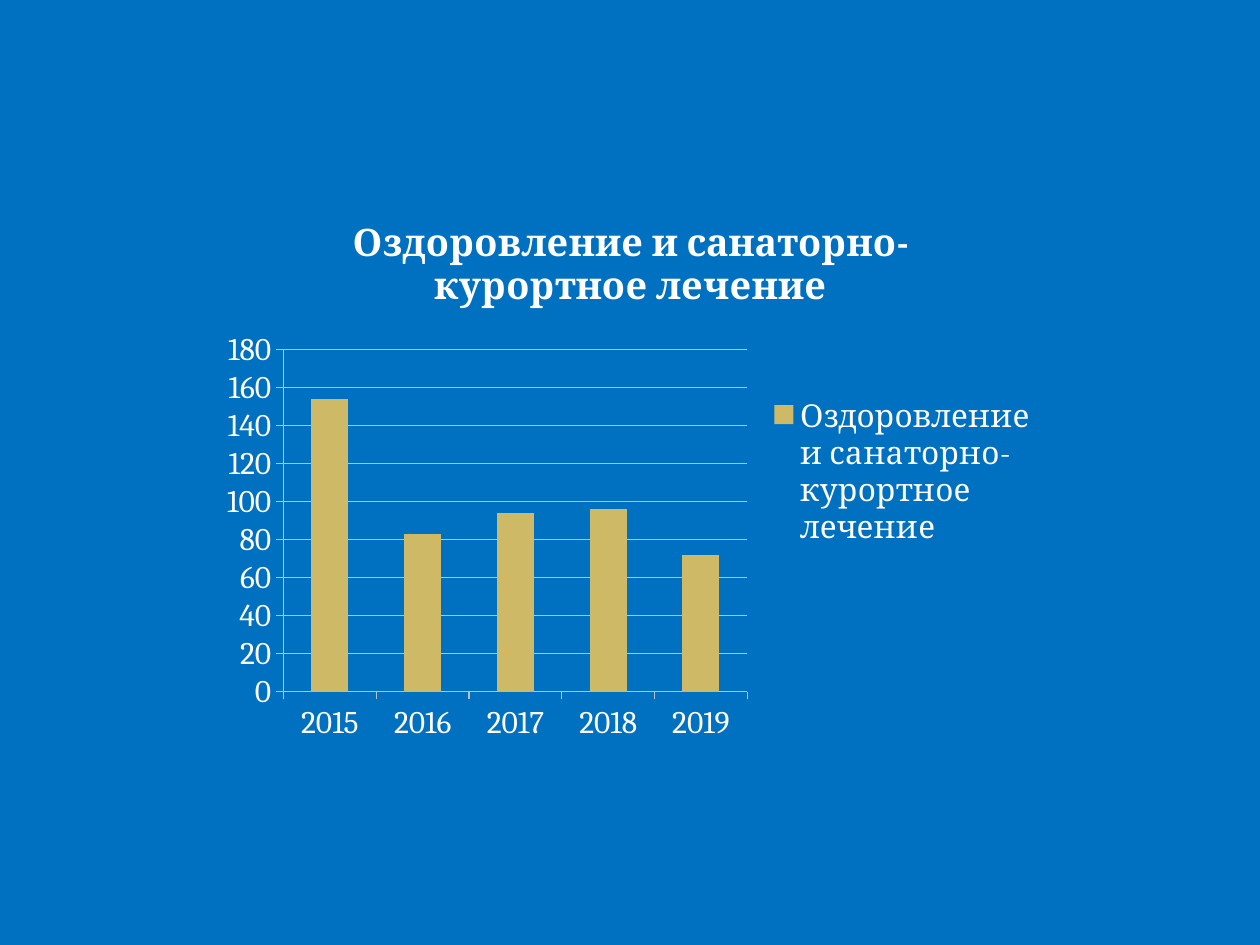
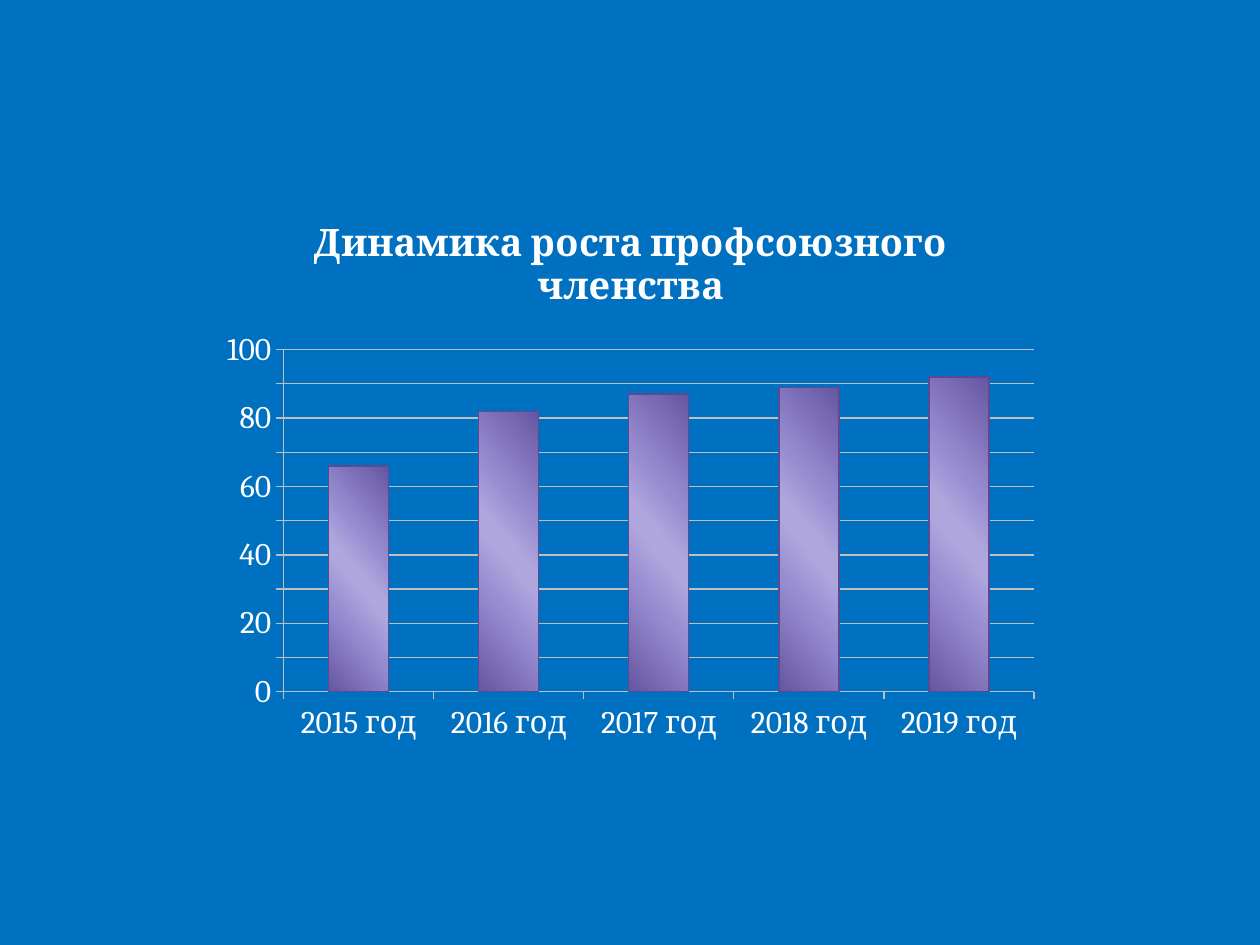
from dataclasses import dataclass

from lxml import etree
from pptx import Presentation
from pptx.chart import data
from pptx.dml.color import RGBColor
from pptx.enum import chart as ch
from pptx.oxml import ns
from pptx.util import Inches, Pt

BLUE = RGBColor(0x00, 0x70, 0xC0)
WHITE = RGBColor(0xFF, 0xFF, 0xFF)
GRID = RGBColor(0xBF, 0xBF, 0xBF)
GOLD = RGBColor(0xCE, 0xB9, 0x66)
PURPLE_EDGE = RGBColor(0x5A, 0x4A, 0x96)
PURPLE_DARK = RGBColor(0x65, 0x56, 0xA1)
PURPLE_LEFT = RGBColor(0x98, 0x8C, 0xD1)
PURPLE_LIGHT = RGBColor(0xAF, 0xA6, 0xDD)
PURPLE_RIGHT = RGBColor(0x99, 0x8D, 0xD2)
PURPLE_STOPS = (
    (0, PURPLE_DARK),
    (33, PURPLE_LEFT),
    (47, PURPLE_LIGHT),
    (53, PURPLE_LIGHT),
    (68, PURPLE_RIGHT),
    (100, PURPLE_DARK),
)
GRADIENT_ANGLE = 139
FONT = "Cambria"
YEARS = [str(year) for year in range(2015, 2020)]


@dataclass(frozen=True)
class ColumnChart:
    title: str
    series: str
    categories: list[str]
    values: tuple[int, ...]
    maximum: int
    step: int
    legend: bool
    gradient: bool


CHARTS = (
    ColumnChart(
        "Оздоровление и санаторно-курортное лечение",
        "Оздоровление и санаторно-курортное лечение",
        YEARS, (154, 83, 94, 96, 72), 180, 20, True, False,
    ),
    ColumnChart(
        "Динамика роста профсоюзного членства",
        "Series 1",
        [f"{year} год" for year in YEARS], (66, 82, 87, 89, 92), 100, 10, False, True,
    ),
)


def style_line(line) -> None:
    line.color.rgb = GRID
    line.width = Pt(0.75)


def style_font(font, size: float, bold: bool) -> None:
    font.name = FONT
    font.size = Pt(size)
    font.bold = bold
    font.color.rgb = WHITE


def fill_gradient(series) -> None:
    fill = series.format.fill
    fill.gradient()
    fill.gradient_angle = 360 - GRADIENT_ANGLE
    stops = series._element.find(".//" + ns.qn("a:gsLst"))
    for stop in list(stops):
        stops.remove(stop)
    for percent, color in PURPLE_STOPS:
        gs = etree.SubElement(stops, ns.qn("a:gs"), pos=str(percent * 1000))
        etree.SubElement(gs, ns.qn("a:srgbClr"), val=str(color))
    series.format.line.color.rgb = PURPLE_EDGE
    series.format.line.width = Pt(0.75)


def add_title(chart, title: str) -> None:
    chart.has_title = True
    tf = chart.chart_title.text_frame
    r = tf.paragraphs[0].add_run()
    r.text = title
    style_font(r.font, 21.6, True)
    chart.chart_title.include_in_layout = False


def add_column_chart(prs, item: ColumnChart) -> None:
    s = prs.slides.add_slide(prs.slide_layouts[6])
    s.background.fill.solid()
    s.background.fill.fore_color.rgb = BLUE

    chart_data = data.CategoryChartData()
    chart_data.categories = item.categories
    chart_data.add_series(item.series, item.values)
    chart = s.shapes.add_chart(
        ch.XL_CHART_TYPE.COLUMN_STACKED,
        Inches(1.67), Inches(1.53), Inches(6.67), Inches(4.44), chart_data,
    ).chart
    style_font(chart.font, 18, False)
    add_title(chart, item.title)

    chart.has_legend = item.legend
    if item.legend:
        chart.legend.position = ch.XL_LEGEND_POSITION.RIGHT
        chart.legend.include_in_layout = False

    for axis in (chart.category_axis, chart.value_axis):
        axis.major_tick_mark = ch.XL_TICK_MARK.OUTSIDE
        style_line(axis.format.line)
    axis = chart.value_axis
    axis.minimum_scale = 0
    axis.maximum_scale = item.maximum
    axis.major_unit = item.step
    axis.has_major_gridlines = True
    style_line(axis.major_gridlines.format.line)

    plot = chart.plots[0]
    plot.vary_by_categories = False
    plot.gap_width = 150
    plot.overlap = 100
    series = plot.series[0]
    if item.gradient:
        fill_gradient(series)
    else:
        series.format.fill.solid()
        series.format.fill.fore_color.rgb = GOLD


def main() -> None:
    prs = Presentation()
    prs.slide_width = Inches(10)
    prs.slide_height = Inches(7.5)
    for item in CHARTS:
        add_column_chart(prs, item)
    prs.save("out.pptx")


if __name__ == "__main__":
    main()
